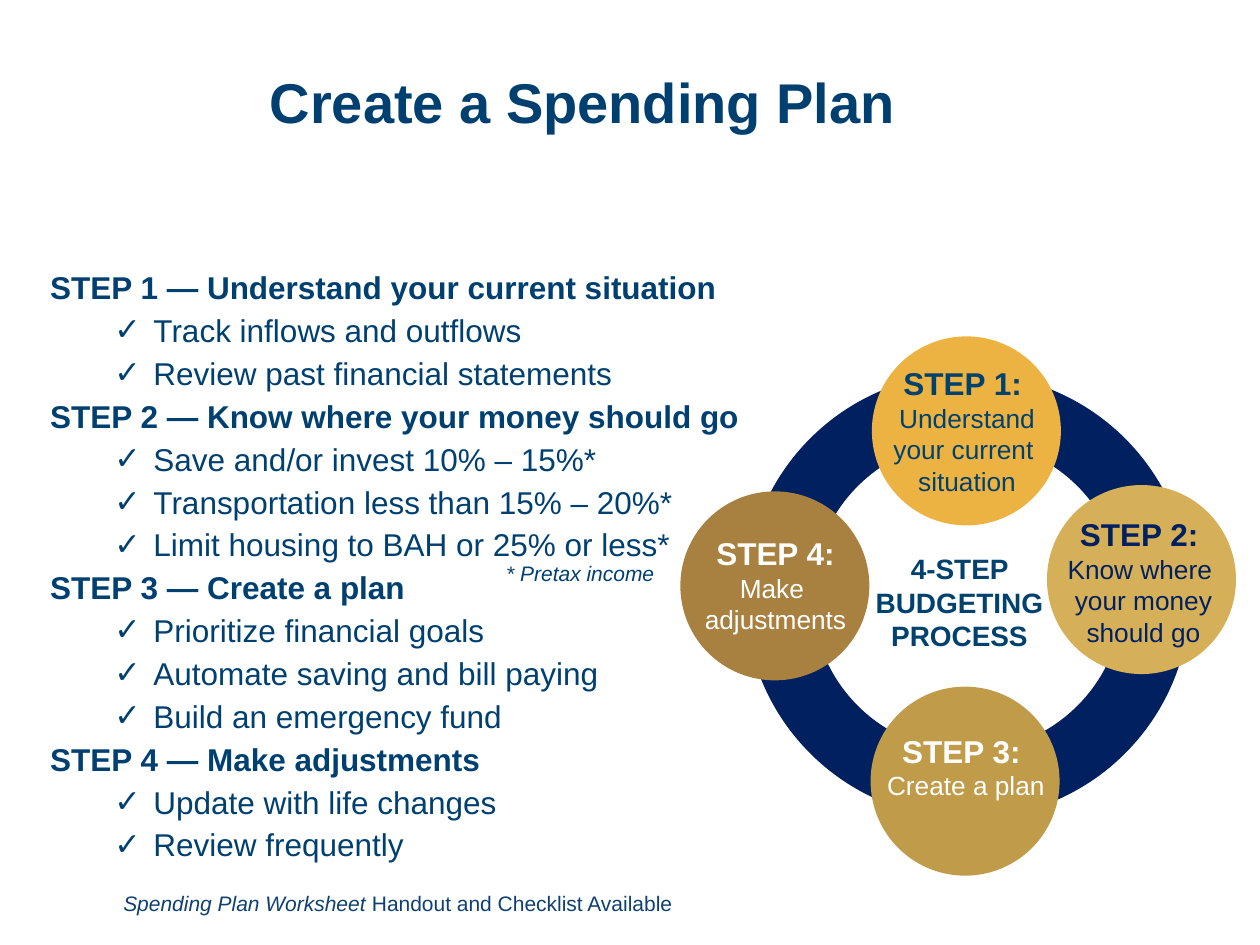
from dataclasses import dataclass
from typing import Optional

from lxml.etree import SubElement
from pptx import Presentation
from pptx.dml.color import RGBColor
from pptx.enum.shapes import MSO_SHAPE
from pptx.enum.text import MSO_ANCHOR, MSO_AUTO_SIZE, PP_ALIGN
from pptx.oxml.ns import qn
from pptx.util import Emu, Pt

EMU_PER_PX = 9144  # 100 px to the inch


@dataclass(frozen=True)
class Theme:
    font: str = "Arial"
    blue: str = "004071"
    center_blue: str = "01416E"
    footer_blue: str = "0E4071"
    navy: str = "002060"
    white: str = "FFFFFF"
    title_size: int = 32
    body_size: int = 18
    center_size: int = 16
    detail_size: int = 15
    note_size: int = 12
    ring_width: float = 38.5
    body_gap: float = 2.9


THEME = Theme()


@dataclass(frozen=True)
class Box:
    left: int
    top: int
    width: int
    height: int

    def emu(self) -> list[Emu]:
        return [px(value) for value in (self.left, self.top, self.width, self.height)]


@dataclass(frozen=True)
class PlanStep:
    heading: str
    actions: tuple[str, ...]


@dataclass(frozen=True)
class CycleStep:
    label: str
    details: tuple[str, ...]
    circle: Box
    caption: Box
    fill: str
    color: str


PLAN = (
    PlanStep("STEP 1 — Understand your current situation",
             ("Track inflows and outflows", "Review past financial statements")),
    PlanStep("STEP 2 — Know where your money should go",
             ("Save and/or invest 10% – 15%*", "Transportation less than 15% – 20%*",
              "Limit housing to BAH or 25% or less*")),
    PlanStep("STEP 3 — Create a plan",
             ("Prioritize financial goals", "Automate saving and bill paying",
              "Build an emergency fund")),
    PlanStep("STEP 4 — Make adjustments",
             ("Update with life changes", "Review frequently")),
)

CYCLE = (
    CycleStep("STEP 1: ", ("Understand your current ", "situation"),
              Box(692, 267, 150, 150), Box(695, 284, 145, 116), "ECB342", THEME.center_blue),
    CycleStep("STEP 2: ", ("Know where ", "your money", "should go"),
              Box(831, 385, 150, 150), Box(835, 404, 145, 120), "D6B059", THEME.navy),
    CycleStep("STEP 3: ", ("Create a plan",),
              Box(691, 545, 150, 150), Box(694, 576, 145, 92), "C09B49", THEME.white),
    CycleStep("STEP 4:", ("Make ", "adjustments"),
              Box(540, 390, 150, 150), Box(543, 419, 145, 92), "A88140", THEME.white),
)


def px(value: int) -> Emu:
    return Emu(value * EMU_PER_PX)


def add_run(paragraph, text: str, size: int, color: str,
            bold: bool = False, italic: bool = False) -> None:
    run = paragraph.add_run()
    run.text = text
    run.font.name = THEME.font
    run.font.size = Pt(size)
    run.font.bold = bold
    run.font.italic = italic
    run.font.color.rgb = RGBColor.from_string(color)


def add_text_frame(shapes, box: Box, grows: bool = False):
    frame = shapes.add_textbox(*box.emu()).text_frame
    frame.word_wrap = True
    if grows:
        frame.auto_size = MSO_AUTO_SIZE.SHAPE_TO_FIT_TEXT
    return frame


def next_paragraph(frame):
    """Return the still empty first paragraph, or a new one after the last."""
    first = frame.paragraphs[0]
    return frame.add_paragraph() if first.runs else first


def indent(paragraph, left: int, first_line: int = 0, bullet: str = "") -> None:
    properties = paragraph._p.get_or_add_pPr()
    properties.set("marL", str(px(left)))
    properties.set("indent", str(px(first_line)))
    if bullet:
        SubElement(properties, qn("a:buFont"), typeface=THEME.font)
        SubElement(properties, qn("a:buChar"), char=bullet)


def add_circle(shapes, box: Box, fill: Optional[str] = None, line: Optional[str] = None) -> None:
    circle = shapes.add_shape(MSO_SHAPE.OVAL, *box.emu())
    circle.shadow.inherit = False
    if fill:
        circle.fill.solid()
        circle.fill.fore_color.rgb = RGBColor.from_string(fill)
    else:
        circle.fill.background()
    if line:
        circle.line.color.rgb = RGBColor.from_string(line)
        circle.line.width = Pt(THEME.ring_width)
    else:
        circle.line.fill.background()


def add_centered_line(frame, text: str, size: int, color: str, bold: bool) -> None:
    paragraph = next_paragraph(frame)
    paragraph.alignment = PP_ALIGN.CENTER
    add_run(paragraph, text, size, color, bold=bold)


def set_title(slide, text: str) -> None:
    title = slide.shapes.title
    title.left, title.top, title.width, title.height = Box(204, 11, 726, 145).emu()
    title.text_frame.vertical_anchor = MSO_ANCHOR.MIDDLE
    paragraph = title.text_frame.paragraphs[0]
    paragraph.alignment = PP_ALIGN.LEFT
    paragraph.line_spacing = 0.9
    add_run(paragraph, text, THEME.title_size, THEME.blue, bold=True)


def add_plan(shapes) -> None:
    frame = add_text_frame(shapes, Box(29, 208, 637, 421))
    for step in PLAN:
        heading = next_paragraph(frame)
        indent(heading, 1)
        if step is not PLAN[0]:
            heading.space_before = Pt(THEME.body_gap)
        add_run(heading, step.heading, THEME.body_size, THEME.blue, bold=True)
        for action in step.actions:
            paragraph = next_paragraph(frame)
            paragraph.level = 1
            indent(paragraph, 83, -31, "✓")
            paragraph.space_before = Pt(THEME.body_gap)
            add_run(paragraph, action, THEME.body_size, THEME.blue)


def add_cycle(shapes) -> None:
    group = shapes.add_group_shape().shapes
    add_circle(group, Box(618, 323, 300, 300), line=THEME.navy)
    for step in CYCLE:
        add_circle(group, step.circle, fill=step.fill)
    center = add_text_frame(group, Box(670, 433, 183, 91), grows=True)
    for text in ("4-STEP BUDGETING", "PROCESS"):
        add_centered_line(center, text, THEME.center_size, THEME.center_blue, True)
    for step in CYCLE:
        frame = add_text_frame(group, step.caption, grows=True)
        add_centered_line(frame, step.label, THEME.body_size, step.color, True)
        for detail in step.details:
            add_centered_line(frame, detail, THEME.detail_size, step.color, False)


def add_notes(shapes) -> None:
    tax_note = add_text_frame(shapes, Box(341, 440, 196, 30)).paragraphs[0]
    indent(tax_note, 51)
    add_run(tax_note, "* Pretax income", THEME.note_size, THEME.blue, italic=True)
    handout = add_text_frame(shapes, Box(88, 702, 471, 30), grows=True).paragraphs[0]
    add_run(handout, "Spending Plan Worksheet", THEME.note_size, THEME.footer_blue, italic=True)
    add_run(handout, " Handout and Checklist Available", THEME.note_size, THEME.footer_blue)


def main() -> None:
    presentation = Presentation()
    presentation.slide_width, presentation.slide_height = px(1000), px(750)
    slide = presentation.slides.add_slide(presentation.slide_layouts[5])
    set_title(slide, "Create a Spending Plan")
    add_plan(slide.shapes)
    add_notes(slide.shapes)
    add_cycle(slide.shapes)
    presentation.save("out.pptx")


if __name__ == "__main__":
    main()
